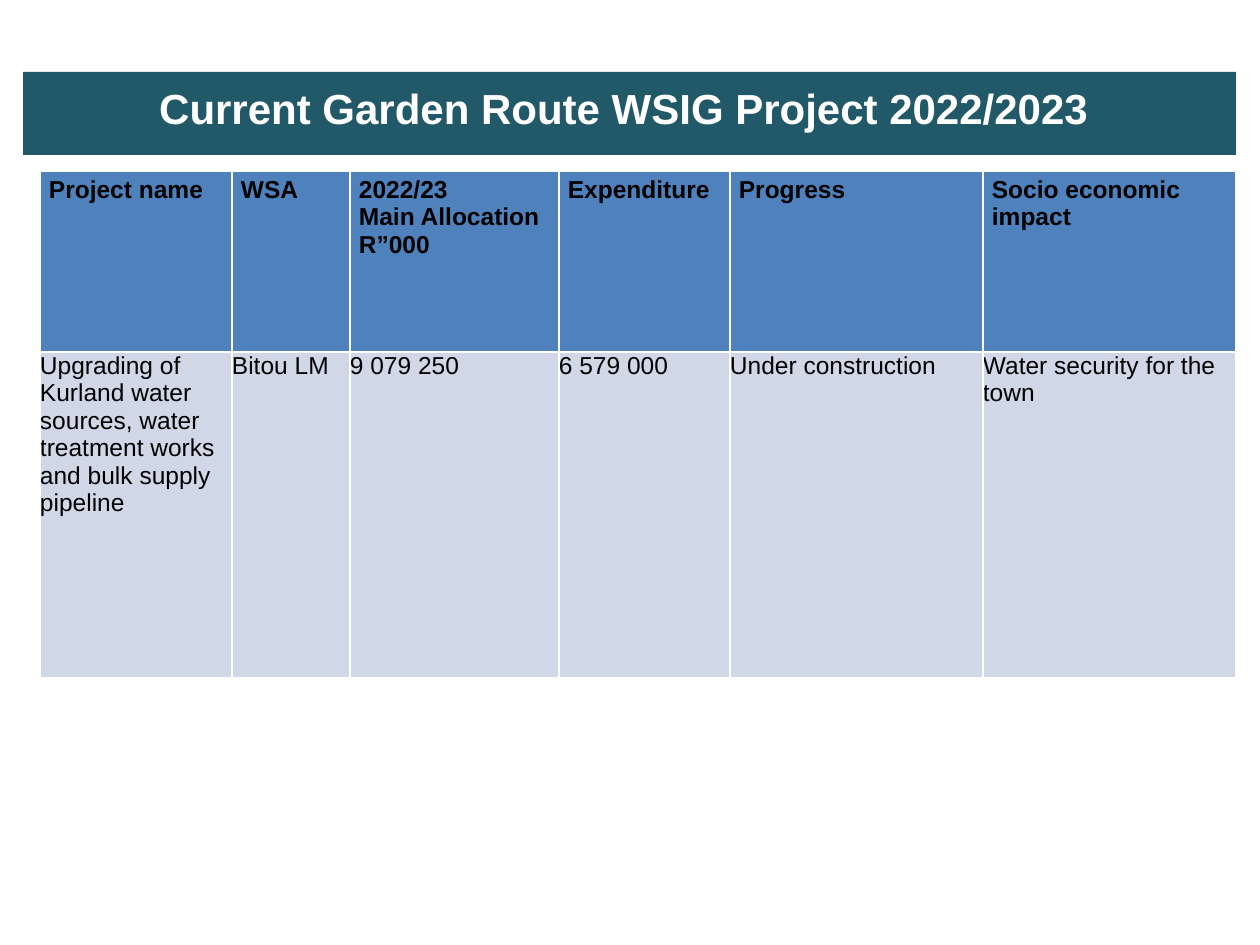
import pptx
import pptx.util
import pptx.dml.color
import pptx.enum.text
import pptx.oxml
import pptx.oxml.ns

RGB = pptx.dml.color.RGBColor
TEAL = RGB(0x21, 0x59, 0x68)
BLUE = RGB(0x4F, 0x81, 0xBD)
PALE = RGB(0xD0, 0xD8, 0xE8)
WHITE = RGB(0xFF, 0xFF, 0xFF)
BLACK = RGB(0, 0, 0)
FONT = "Arial"


def px(n):
    return pptx.util.Emu(round(n * 914400 / 126))


def edge(cell, color, width):
    """Draw a solid border on all four sides; call before filling the cell."""
    props = cell._tc.get_or_add_tcPr()
    for side in ("lnL", "lnR", "lnT", "lnB"):
        props.append(pptx.oxml.parse_xml(
            f'<a:{side} {pptx.oxml.ns.nsdecls("a")} w="{pptx.util.Pt(width)}">'
            f'<a:solidFill><a:srgbClr val="{color}"/></a:solidFill></a:{side}>'))


deck = pptx.Presentation()
deck.slide_width = px(1260)
deck.slide_height = px(945)
slide = deck.slides.add_slide(deck.slide_layouts[5])

# Title band
title = slide.shapes.title
title.left, title.top, title.width, title.height = px(23), px(72), px(1213), px(83)
title.fill.solid()
title.fill.fore_color.rgb = TEAL
frame = title.text_frame
frame.text = "Current Garden Route WSIG Project 2022/2023 "
frame.auto_size = pptx.enum.text.MSO_AUTO_SIZE.NONE
frame.vertical_anchor = pptx.enum.text.MSO_ANCHOR.TOP
frame.margin_top = px(10)
par = frame.paragraphs[0]
par.alignment = pptx.enum.text.PP_ALIGN.CENTER
font = par.runs[0].font
font.name, font.size, font.bold = FONT, pptx.util.Pt(24), True
font.color.rgb = WHITE

# Project table
rows = [
    ["Project name", "WSA", "2022/23\nMain Allocation\nR”000", "Expenditure",
     "Progress", "Socio economic impact"],
    ["Upgrading of Kurland water sources, water treatment works and bulk supply pipeline",
     "Bitou LM", "9 079 250", "6 579 000", "Under construction",
     "Water security for the town\u00a0"],
]
widths = [192, 118, 209, 171, 253, 253]
heights = [181, 326]
table = slide.shapes.add_table(len(rows), len(widths), px(40), px(171),
                               px(sum(widths)), px(sum(heights))).table
for col, width in zip(table.columns, widths):
    col.width = px(width)
for row, height in zip(table.rows, heights):
    row.height = px(height)

for r, texts in enumerate(rows):
    head = r == 0
    for c, text in enumerate(texts):
        cell = table.cell(r, c)
        edge(cell, WHITE, 1)
        cell.fill.solid()
        cell.fill.fore_color.rgb = BLUE if head else PALE
        cell.margin_left = cell.margin_right = px(9 if head else 0)
        cell.margin_top = cell.margin_bottom = px(5 if head else 0)
        cell.text_frame.text = text
        for par in cell.text_frame.paragraphs:
            font = par.runs[0].font
            font.name, font.size, font.bold = FONT, pptx.util.Pt(14), head
            font.color.rgb = BLACK

deck.save("out.pptx")
